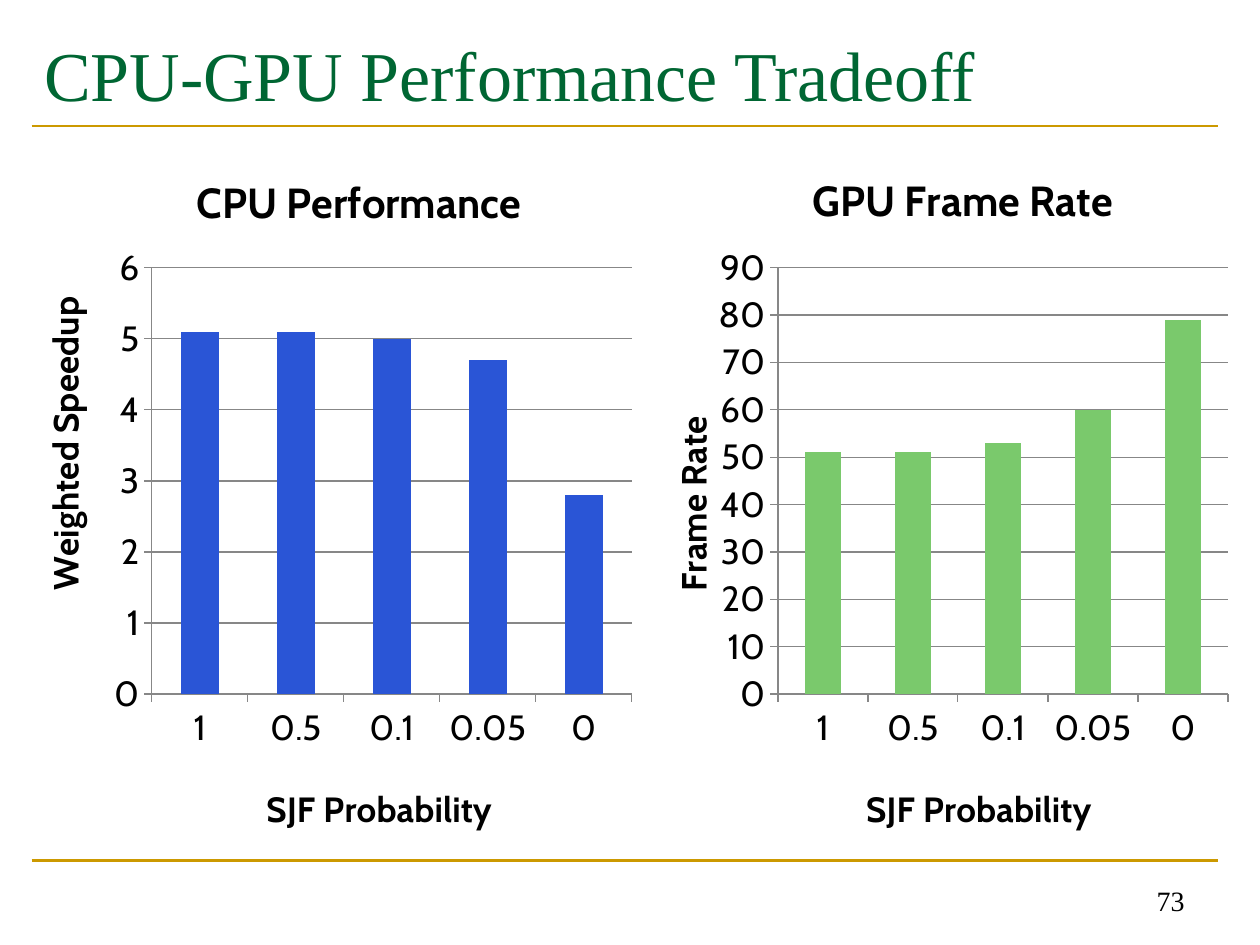
from dataclasses import dataclass

from lxml.etree import SubElement
from pptx import Presentation
from pptx.chart.data import CategoryChartData
from pptx.dml.color import RGBColor
from pptx.enum.chart import XL_CHART_TYPE as ChartType, XL_TICK_MARK as TickMark
from pptx.enum.shapes import MSO_CONNECTOR as Connector
from pptx.enum.text import MSO_ANCHOR as Anchor, PP_ALIGN as Align
from pptx.oxml import parse_xml
from pptx.oxml.ns import nsdecls, qn
from pptx.util import Inches, Pt


@dataclass(frozen=True)
class Theme:
    """Colours, fonts and type sizes of the slide."""
    title: str = "006633"
    rule: str = "CC9900"
    text: str = "000000"
    grid: str = "878787"
    blue: str = "2A55D6"
    green: str = "7AC96C"
    serif: str = "Times New Roman"
    sans: str = "Cabin"
    title_size: int = 40
    number_size: int = 16
    heading_size: int = 24
    axis_size: int = 20


THEME = Theme()
CATEGORIES = ("1", "0.5", "0.1", "0.05", "0")
CHARTS = (
    {"box": (4.92, 1.07, 4.92, 5.67), "name": "GPU Frame Rate",
     "axis": "Frame Rate", "values": (51, 51, 53, 60, 79),
     "scale": (90, 10), "color": THEME.green,
     "plot": (0.255, 0.186, 0.726, 0.597), "heading": (0.298, 0.04),
     "value_title": (0.068, 0.385), "category_title": (0.387, 0.9)},
    {"box": (0.12, 1.07, 5, 5.67), "name": "CPU Performance",
     "axis": "Weighted Speedup", "values": (5.1, 5.1, 5, 4.7, 2.8),
     "scale": (6, 1), "color": THEME.blue,
     "plot": (0.217, 0.186, 0.762, 0.597), "heading": (0.276, 0.042),
     "value_title": (0.03, 0.217), "category_title": (0.389, 0.9)},
)


def apply(target, values):
    """Set each named attribute of the target."""
    for name, value in values.items():
        setattr(target, name, value)


def format_font(font, family, size, color, bold=False):
    """Give a font its family, size, colour and weight."""
    apply(font, {"name": family, "size": Pt(size), "bold": bold})
    font.color.rgb = RGBColor.from_string(color)


def format_line(line, color, width):
    """Give a line its colour and width."""
    line.color.rgb = RGBColor.from_string(color)
    line.width = Pt(width)


def place_in_chart(element, index, shares, inner=False):
    """Fix a chart part at shares of the chart's size."""
    for old in element.findall(qn("c:layout")):
        element.remove(old)
    layout = parse_xml(f"<c:layout {nsdecls('c')}><c:manualLayout/></c:layout>")
    settings = [("layoutTarget", "inner")] if inner else []
    settings += [("xMode", "edge"), ("yMode", "edge")]
    settings += zip("xywh", shares)
    for name, value in settings:
        SubElement(layout[0], qn(f"c:{name}")).set("val", str(value))
    element.insert(index, layout)


def write_chart_title(title, text, size, shares):
    """Write and place a chart or axis title."""
    paragraph = title.text_frame.paragraphs[0]
    run = paragraph.add_run()
    run.text = text
    format_font(run.font, THEME.sans, size, THEME.text, True)
    place_in_chart(title.element, 1, shares)


def format_axis(axis, text, shares):
    """Format an axis with its title, ticks and labels."""
    apply(axis, {"has_title": True, "major_tick_mark": TickMark.OUTSIDE,
                 "minor_tick_mark": TickMark.NONE})
    format_font(axis.tick_labels.font, THEME.sans, THEME.axis_size, THEME.text)
    format_line(axis.format.line, THEME.grid, 0.75)
    write_chart_title(axis.axis_title, text, THEME.axis_size, shares)


def add_column_chart(slide, chart_info):
    """Add one column chart in its box."""
    data = CategoryChartData()
    data.categories = CATEGORIES
    data.add_series(chart_info["name"], chart_info["values"])
    box = map(Inches, chart_info["box"])
    chart = slide.shapes.add_chart(ChartType.COLUMN_CLUSTERED, *box, data).chart
    format_font(chart.font, THEME.sans, 10, THEME.text)
    apply(chart, {"has_legend": False, "has_title": True})
    write_chart_title(chart.chart_title, chart_info["name"],
                      THEME.heading_size, chart_info["heading"])

    format_axis(chart.category_axis, "SJF Probability", chart_info["category_title"])
    value_axis = chart.value_axis
    format_axis(value_axis, chart_info["axis"], chart_info["value_title"])
    maximum, step = chart_info["scale"]
    apply(value_axis, {"minimum_scale": 0, "maximum_scale": maximum,
                       "major_unit": step, "has_major_gridlines": True})
    format_line(value_axis.major_gridlines.format.line, THEME.grid, 0.75)
    body = value_axis.axis_title.element.find(".//" + qn("a:bodyPr"))
    apply_rotation = {"rot": "-5400000", "vert": "horz"}
    for name, value in apply_rotation.items():
        body.set(name, value)

    plot = chart.plots[0]
    apply(plot, {"gap_width": 150, "vary_by_categories": False})
    fill = plot.series[0].format.fill
    fill.solid()
    fill.fore_color.rgb = RGBColor.from_string(chart_info["color"])
    plot_area = chart.element.find(".//" + qn("c:plotArea"))
    place_in_chart(plot_area, 0, chart_info["plot"], inner=True)


def add_rule(slide, left, top, width):
    """Add a horizontal gold rule."""
    ends = map(Inches, (left, top, left + width, top))
    rule = slide.shapes.add_connector(Connector.STRAIGHT, *ends)
    format_line(rule.line, THEME.rule, 1.5)
    SubElement(rule.element.spPr, qn("a:effectLst"))


def write_text(shape, box, text, font, alignment, anchor):
    """Place a text shape in its box and write one formatted line."""
    apply(shape, dict(zip(("left", "top", "width", "height"), map(Inches, box))))
    apply(shape.text_frame, {"text": text, "word_wrap": True,
                             "vertical_anchor": anchor})
    paragraph = shape.text_frame.paragraphs[0]
    paragraph.alignment = alignment
    format_font(paragraph.runs[0].font, *font)


def add_frame(slide, left, width):
    """Add the rules, the title and the slide number."""
    for top in (6.83, 1):
        add_rule(slide, left, top, width)
    write_text(slide.shapes.title, (left, 0.17, width, 0.83),
               "CPU-GPU Performance Tradeoff",
               (THEME.serif, THEME.title_size, THEME.title),
               Align.LEFT, Anchor.MIDDLE)
    write_text(slide.shapes.add_textbox(0, 0, 0, 0), (7.17, 6.83, 2.33, 0.5),
               "73", (THEME.serif, THEME.number_size, THEME.text),
               Align.RIGHT, Anchor.BOTTOM)


def main():
    """Build and save the slide."""
    presentation = Presentation()
    apply(presentation, {"slide_width": Inches(10), "slide_height": Inches(7.5)})
    slide = presentation.slides.add_slide(presentation.slide_layouts[5])
    add_frame(slide, 0.25, 9.42)
    for chart_info in CHARTS:
        add_column_chart(slide, chart_info)
    presentation.save("out.pptx")


if __name__ == "__main__":
    main()
